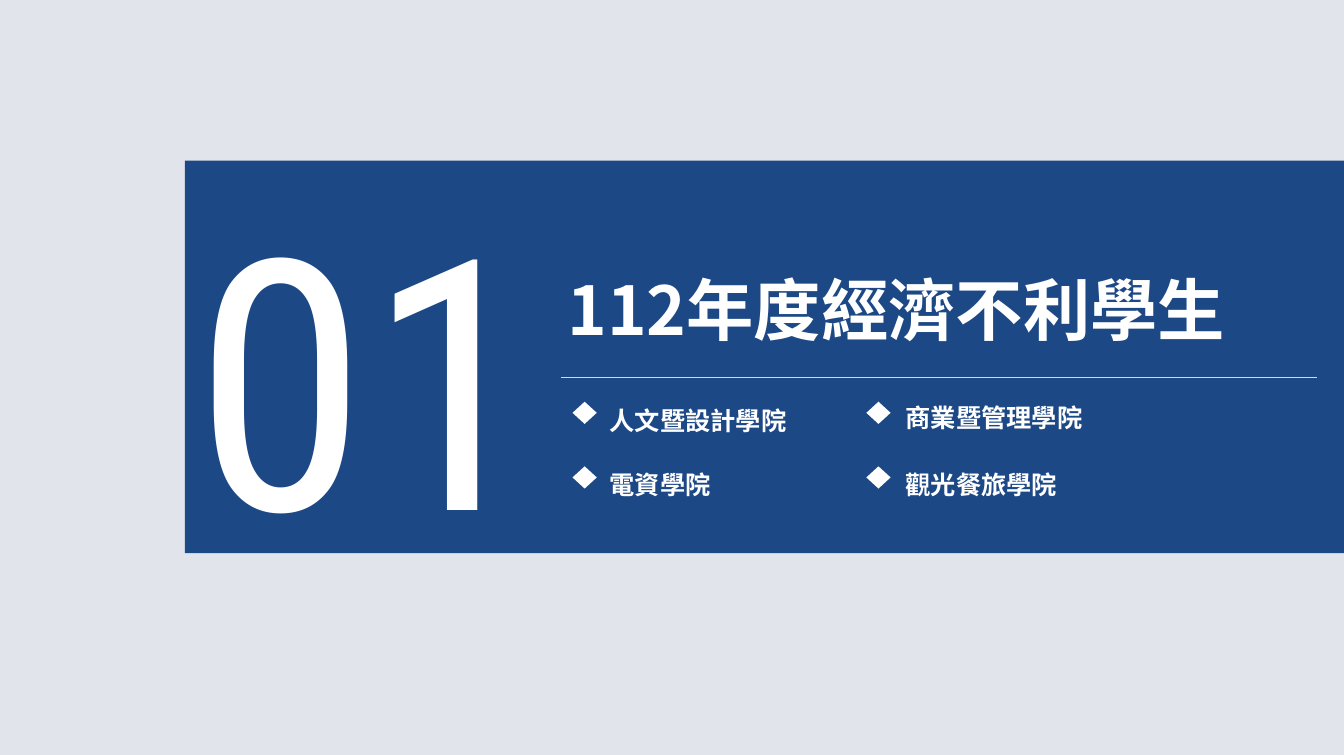
from pptx import Presentation
from pptx.dml.color import RGBColor
from pptx.enum.shapes import MSO_CONNECTOR, MSO_SHAPE
from pptx.enum.text import MSO_ANCHOR, PP_ALIGN
from pptx.oxml.ns import qn
from pptx.util import Inches, Pt
from lxml import etree

RECTANGLE, DIAMOND = MSO_SHAPE.RECTANGLE, MSO_SHAPE.DIAMOND
STRAIGHT = MSO_CONNECTOR.STRAIGHT
TOP = MSO_ANCHOR.TOP
LEFT, CENTER, JUSTIFY = PP_ALIGN.LEFT, PP_ALIGN.CENTER, PP_ALIGN.JUSTIFY

COLORS = {"background": "E2E4EC", "panel": "1C4885", "text": "FFFFFF", "rule": "D9D9D9"}
CHINESE_FONT = "Noto Sans CJK SC"
NUMBER_FONT = "Roboto Condensed"

TITLE_ONLY = 5
COLUMN_GAP = 2.91
ROW_GAP = 0.64
# name, column, row, top of the label
COLLEGES = [
    ("人文暨設計學院", 0, 0, 3.82),
    ("商業暨管理學院", 1, 0, 3.79),
    ("電資學院", 0, 1, 4.45),
    ("觀光餐旅學院", 1, 1, 4.45),
]


def color(name):
    return RGBColor.from_string(COLORS[name])


def add_block(shapes, kind, left, top, width, height, fill):
    block = shapes.add_shape(kind, Inches(left), Inches(top), Inches(width), Inches(height))
    block.shadow.inherit = False
    block.fill.solid()
    block.fill.fore_color.rgb = color(fill)
    block.line.fill.background()
    return block


def write(box, text, size, font_name, bold=False, align=LEFT, spacing=1.0):
    """Fill a text shape with one white paragraph."""
    frame = box.text_frame
    frame.word_wrap = True
    frame.vertical_anchor = TOP
    paragraph = frame.paragraphs[0]
    paragraph.text = text
    paragraph.alignment = align
    paragraph.line_spacing = spacing
    font = paragraph.runs[0].font
    font.size = Pt(size)
    font.bold = bold
    font.name = font_name
    font.color.rgb = color("text")
    east_asian = etree.SubElement(paragraph.runs[0].font._element, qn("a:ea"))
    east_asian.set("typeface", font_name)


def add_text(shapes, left, top, width, height, text, size, font_name, **style):
    box = shapes.add_textbox(Inches(left), Inches(top), Inches(width), Inches(height))
    write(box, text, size, font_name, **style)


def add_title(page, text):
    title = page.shapes.title
    title.left, title.top = Inches(5.52), Inches(2.61)
    title.width, title.height = Inches(7.42), Inches(0.91)
    write(title, text, 48, CHINESE_FONT, bold=True, align=JUSTIFY)
    return title


def add_rule(page, left, right, top):
    rule = page.shapes.add_connector(
        STRAIGHT, Inches(left), Inches(top), Inches(right), Inches(top))
    rule.line.color.rgb = color("rule")
    rule.line.width = Pt(0.75)
    etree.SubElement(rule.element.spPr, qn("a:effectLst"))


def add_college(page, name, column, row, label_top):
    """Group a college's name with its diamond marker."""
    shapes = page.shapes.add_group_shape().shapes
    add_text(shapes, 5.94 + column * 2.93, label_top, 2.27, 0.53,
             name, 18, CHINESE_FONT, bold=True, spacing=1.5)
    add_block(shapes, DIAMOND, 5.67 + column * COLUMN_GAP, 3.98 + row * ROW_GAP,
              0.24, 0.22, "text")


def main():
    deck = Presentation()
    deck.slide_width, deck.slide_height = Inches(13.31), Inches(7.48)
    page = deck.slides.add_slide(deck.slide_layouts[TITLE_ONLY])
    page.background.fill.solid()
    page.background.fill.fore_color.rgb = color("background")

    title = add_title(page, "112年度經濟不利學生")
    panel = add_block(page.shapes, RECTANGLE, 1.83, 1.59, 11.48, 3.89, "panel")
    title.element.addprevious(panel.element)  # the panel lies behind the title
    add_rule(page, 5.56, 13.04, 3.74)
    for college in COLLEGES:
        add_college(page, *college)
    add_text(page.shapes, 1.81, 1.54, 3.67, 4.31, "01", 250, NUMBER_FONT, align=CENTER)
    deck.save("out.pptx")


if __name__ == "__main__":
    main()
